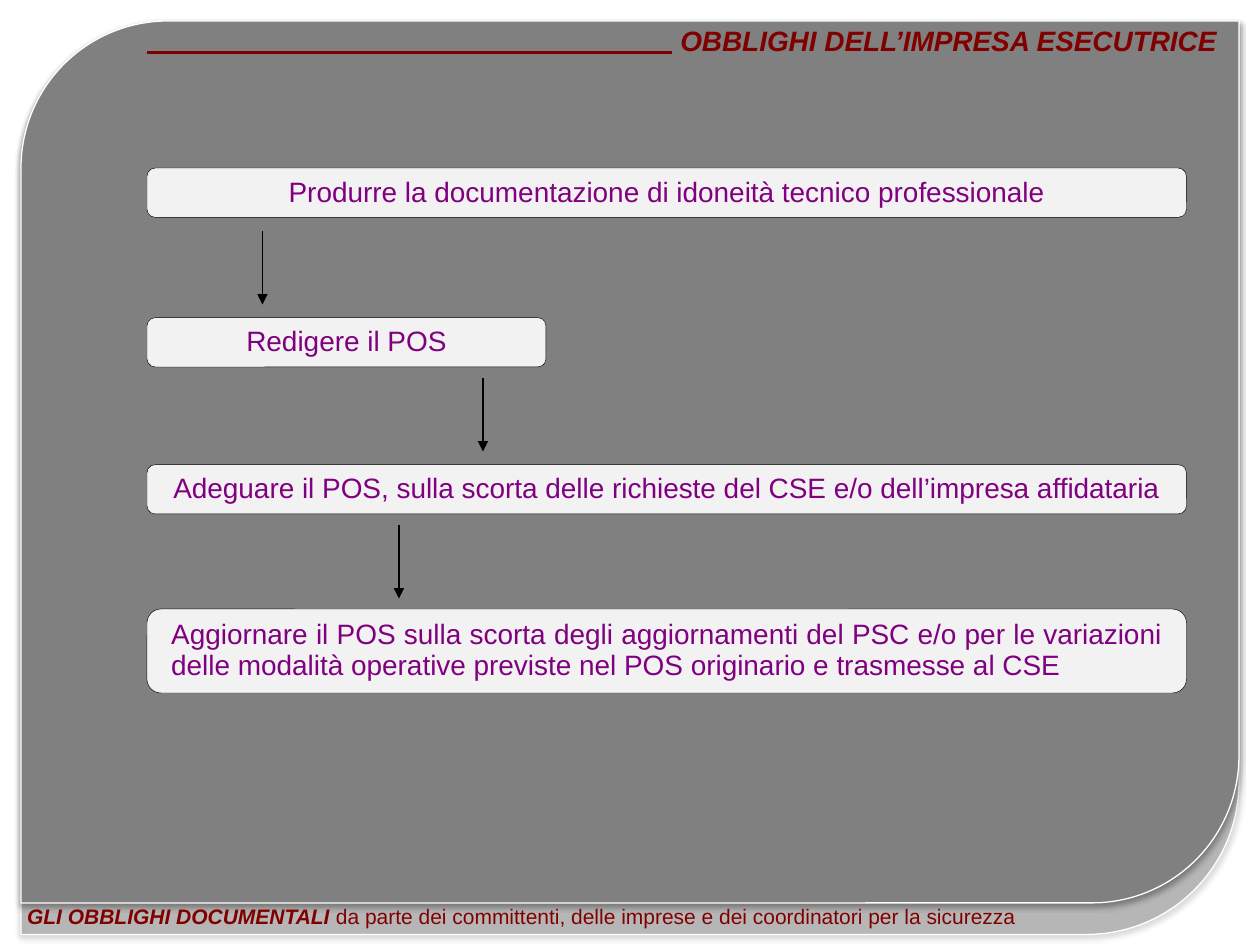
from typing import NamedTuple

from lxml import etree
from pptx import Presentation
from pptx.dml.color import RGBColor
from pptx.enum.shapes import MSO_CONNECTOR, MSO_SHAPE
from pptx.enum.text import MSO_ANCHOR, PP_ALIGN
from pptx.oxml.ns import qn
from pptx.util import Emu, Inches, Pt

ROUND, LEAF = MSO_SHAPE.ROUNDED_RECTANGLE, MSO_SHAPE.ROUND_2_DIAG_RECTANGLE
STRAIGHT, MIDDLE = MSO_CONNECTOR.STRAIGHT, MSO_ANCHOR.MIDDLE
CENTER, RIGHT, JUSTIFY = PP_ALIGN.CENTER, PP_ALIGN.RIGHT, PP_ALIGN.JUSTIFY
WIDE, HIGH = Inches(10), Inches(7.5)
COLS, ROWS = 120, 90
LEFT, FULL, DROP = 14, 99, 7
RED, PURPLE, BLACK, WHITE = "800000", "800080", "000000", "FFFFFF"
GREY, PALE = "808080", "F2F2F2"


class Area(NamedTuple):
    """Place on the grid, in columns and rows."""
    col: float
    row: float
    cols: float
    rows: float


class Part(NamedTuple):
    """Run of text with its weight."""
    text: str
    strong: bool


class Step(NamedTuple):
    """Box in the chain of duties."""
    row: float
    cols: float
    rows: float
    text: str
    wrap: bool = False


class Arrow(NamedTuple):
    """Start of a downward arrow."""
    col: float
    row: float


PANELS = [(Area(2, 2, 116, 87), 40), (Area(2, 2, 116, 84), 100)]
STEPS = [
    Step(16, FULL, 4.7, "Produrre la documentazione di idoneità tecnico professionale"),
    Step(30.25, 38, 4.7, "Redigere il POS"),
    Step(44.25, FULL, 4.7, "Adeguare il POS, sulla scorta delle richieste del CSE "
         "e/o dell’impresa affidataria"),
    Step(58, FULL, 8, "Aggiornare il POS sulla scorta degli aggiornamenti del PSC "
         "e/o per le variazioni delle modalità operative previste nel POS "
         "originario e trasmesse al CSE", True),
]
ARROWS = [Arrow(25, 22), Arrow(46, 36), Arrow(38, 50)]
TITLE = [Part("OBBLIGHI DELL’IMPRESA ESECUTRICE", True)]
FOOTER = [
    Part("GLI OBBLIGHI DOCUMENTALI ", True),
    Part("da parte dei committenti, delle imprese e dei coordinatori per la sicurezza", False),
]


def color(code: str) -> RGBColor:
    """Turn a hex string into a colour."""
    return RGBColor.from_string(code)


def place(area: Area) -> list[Emu]:
    """Turn grid units into lengths."""
    return [Emu(round(size * unit)) for size, unit in zip(area, (WIDE / COLS, HIGH / ROWS) * 2)]


def add(node, tag: str, **attrs: str):
    """Append a drawing element."""
    return etree.SubElement(node, qn(tag), attrs)


def write(frame, parts: list[Part], size: float, code: str, align, wrap: bool, inset: float) -> None:
    """Fill a frame with one paragraph."""
    frame.word_wrap = wrap
    frame.vertical_anchor = MIDDLE
    frame.margin_left = frame.margin_right = Inches(inset)
    frame.margin_top = frame.margin_bottom = Inches(0.04)
    para = frame.paragraphs[0]
    para.alignment, para.line_spacing = align, 0.93
    for part in parts:
        run = para.add_run()
        run.text = part.text
        font = run.font
        font.name, font.size = "Arial", Pt(size)
        font.bold = font.italic = part.strong
        font.color.rgb = color(code)


def draw_shape(slide, kind, area: Area, fill: str, line: str, width: float):
    """Draw a filled preset shape."""
    shape = slide.shapes.add_shape(kind, *place(area))
    shape.fill.solid()
    shape.fill.fore_color.rgb = color(fill)
    shape.line.color.rgb = color(line)
    shape.line.width = Pt(width)
    shape.shadow.inherit = False
    return shape


def draw_panel(slide, area: Area, alpha: int) -> None:
    """Draw a backing panel with a soft shadow."""
    props = draw_shape(slide, LEAF, area, GREY, WHITE, 0.75).element.spPr
    if alpha < 100:
        add(props.find(qn("a:solidFill"))[0], "a:alpha", val=str(alpha * 1000))
    shade = add(props.find(qn("a:effectLst")), "a:outerShdw", blurRad=str(Pt(3.1)),
                dist=str(Pt(1.8)), dir="5400000", rotWithShape="0")
    add(add(shade, "a:srgbClr", val=BLACK), "a:alpha", val="35000")


def draw_step(slide, step: Step) -> None:
    """Draw a box with its duty."""
    area = Area(LEFT, step.row, step.cols, step.rows)
    box = draw_shape(slide, ROUND, area, PALE, BLACK, 0.25)
    box.adjustments[0] = 0.167
    align = JUSTIFY if step.wrap else CENTER
    write(box.text_frame, [Part(step.text, False)], 16, PURPLE, align, step.wrap, 0.16)


def draw_label(slide, area: Area, parts: list[Part], size: float, align) -> None:
    """Draw a text box."""
    box = slide.shapes.add_textbox(*place(area))
    write(box.text_frame, parts, size, RED, align, True, 0.09)


def draw_line(slide, start: tuple, end: tuple, code: str, width: float, head: bool = False) -> None:
    """Draw a line, with an arrowhead if asked."""
    line = slide.shapes.add_connector(STRAIGHT, *place(Area(*start, *end)))
    line.line.color.rgb = color(code)
    line.line.width = Pt(width)
    props = line.element.spPr
    if head:
        add(props.find(qn("a:ln")), "a:tailEnd", type="triangle")
    add(props, "a:effectLst")


def main() -> None:
    """Build the slide."""
    deck = Presentation()
    deck.slide_width, deck.slide_height = WIDE, HIGH
    slide = deck.slides.add_slide(deck.slide_layouts[6])
    for area, alpha in PANELS:
        draw_panel(slide, area, alpha)
    draw_label(slide, Area(1.5, 85.7, 104, 3.4), FOOTER, 12, JUSTIFY)
    draw_label(slide, Area(62, 2, 55, 4.1), TITLE, 16, RIGHT)
    draw_line(slide, (64, 5), (LEFT, 5), RED, 2)
    for step in STEPS:
        draw_step(slide, step)
    for col, row in ARROWS:
        draw_line(slide, (col, row), (col, row + DROP), BLACK, 0.75, True)
    deck.save("out.pptx")


if __name__ == "__main__":
    main()
